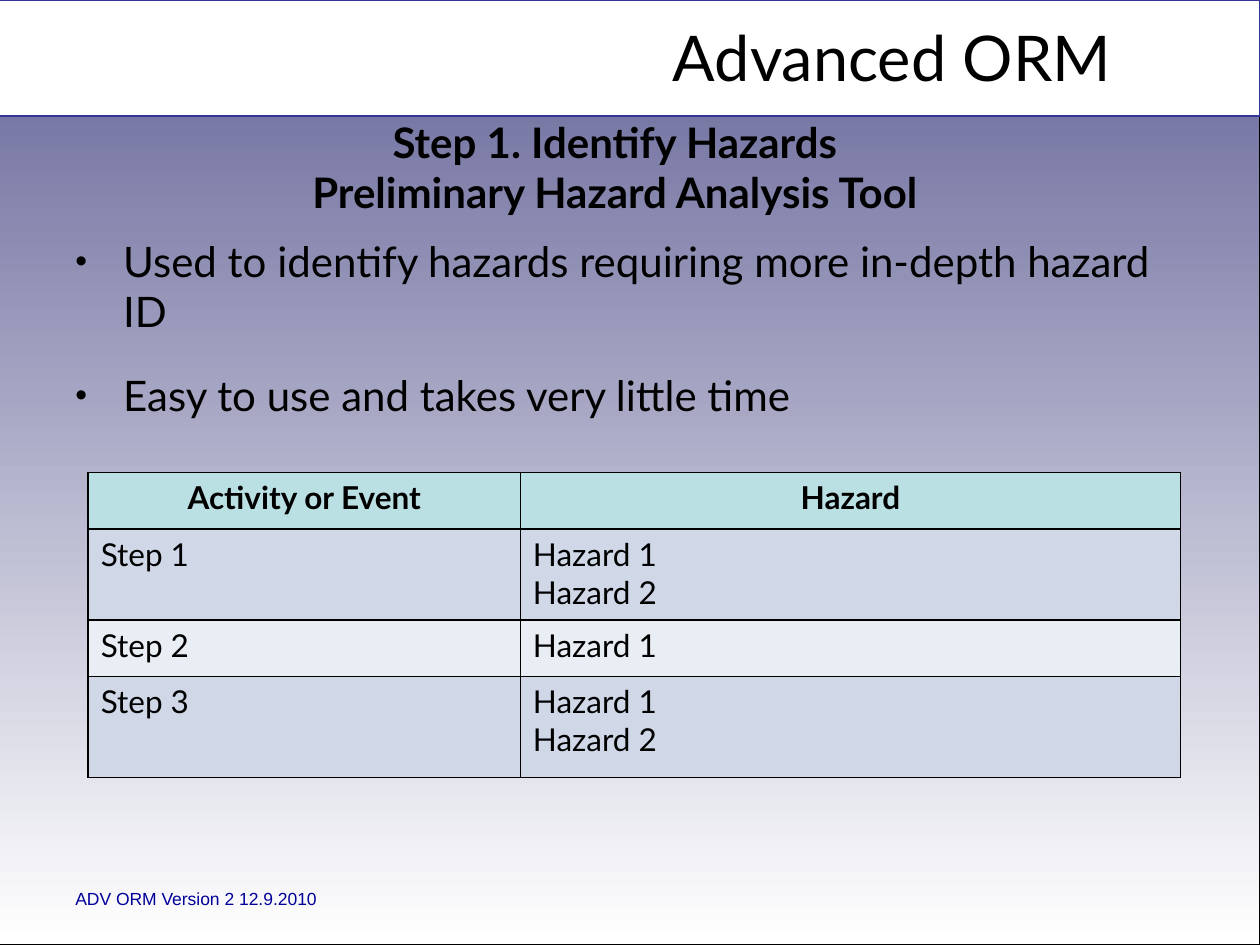
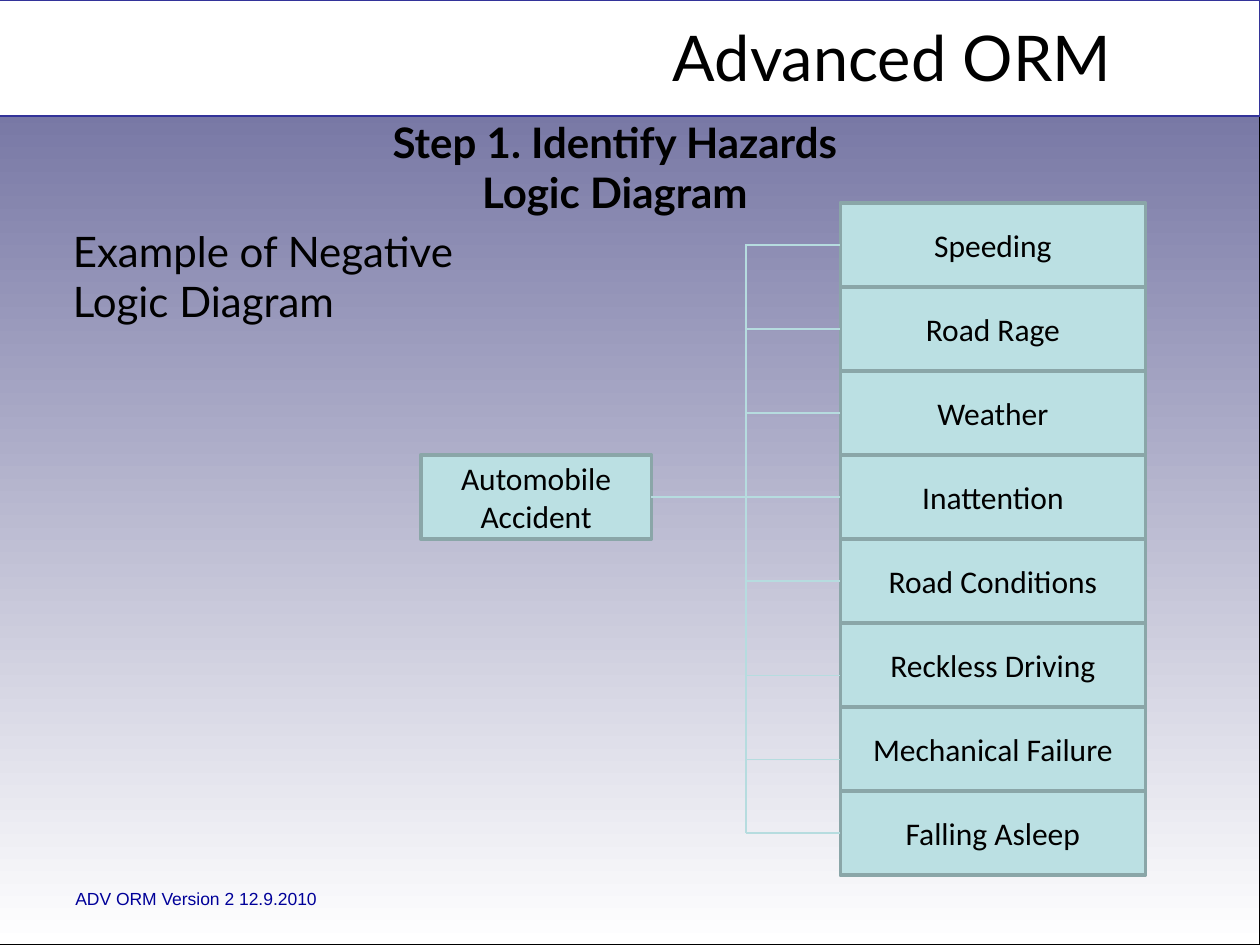
"""Build two Advanced ORM pages: a hazard analysis table and a logic diagram."""
from dataclasses import dataclass, replace
from typing import NamedTuple

import lxml.etree
import pptx
import pptx.dml.color
import pptx.enum.dml
import pptx.enum.shapes
import pptx.enum.text
import pptx.oxml.ns
import pptx.util

Inches, Pt = pptx.util.Inches, pptx.util.Pt
RGBColor = pptx.dml.color.RGBColor
Align, Anchor = pptx.enum.text.PP_ALIGN, pptx.enum.text.MSO_ANCHOR
Preset = pptx.enum.shapes.MSO_SHAPE
qn = pptx.oxml.ns.qn

BLACK = RGBColor(0x00, 0x00, 0x00)
WHITE = RGBColor(0xFF, 0xFF, 0xFF)
SLATE = RGBColor(0x66, 0x66, 0x99)
BAND_EDGE = RGBColor(0x33, 0x33, 0x99)
FOOTER_BLUE = RGBColor(0x00, 0x00, 0x99)
AQUA = RGBColor(0xBB, 0xE0, 0xE3)
BOX_EDGE = RGBColor(0x8A, 0xA6, 0xA8)
BRANCH = RGBColor(0xB6, 0xDC, 0xDF)
ROW_DARK = RGBColor(0xD0, 0xD8, 0xE8)
ROW_LIGHT = RGBColor(0xE9, 0xED, 0xF4)

HANGING = 0.38
TRUNK_X = 5.92
CAUSE_STEP = 2 / 3


class Area(NamedTuple):
    """Left, top, width and height in inches."""
    left: float
    top: float
    width: float
    height: float

    def lengths(self) -> list[int]:
        """Give the four values as slide lengths."""
        return [Inches(value) for value in self]


@dataclass(frozen=True)
class Style:
    """Look of a block of text."""
    size: float
    font: str = "Lato"
    color: RGBColor = BLACK
    bold: bool = False
    align: Align = Align.LEFT
    anchor: Anchor = Anchor.TOP


@dataclass(frozen=True)
class Cause:
    """One cause in the diagram, with its branch height if off centre."""
    label: str
    branch_y: float | None = None


TITLE = Style(36, align=Align.CENTER, anchor=Anchor.MIDDLE)
HEADING = Style(24, bold=True, align=Align.CENTER, anchor=Anchor.MIDDLE)
BODY = Style(24)
FOOTER = Style(10, "Arial", FOOTER_BLUE)
BOX_TEXT = Style(18, "Calibri", align=Align.CENTER, anchor=Anchor.MIDDLE)
CELL = Style(18)
HEADER_CELL = replace(CELL, bold=True, align=Align.CENTER)

HAZARD_ROWS = [
    ("Activity or Event", "Hazard"),
    ("Step 1", "Hazard 1\nHazard 2"),
    ("Step 2", "Hazard 1"),
    ("Step 3", "Hazard 1\nHazard 2"),
]
COLUMN_WIDTHS = (3.43, 5.24)
ROW_HEIGHTS = (0.45, 0.72, 0.45, 0.8)

CAUSES = [
    Cause("Speeding"),
    Cause("Road Rage"),
    Cause("Weather"),
    Cause("Inattention"),
    Cause("Road Conditions"),
    Cause("Reckless Driving", 5.36),
    Cause("Mechanical Failure", 6.03),
    Cause("Falling Asleep"),
]
TRUNK_CAUSE = "Inattention"


def write(frame, text: str, style: Style) -> None:
    """Fill a text frame and format every run."""
    frame.text = text
    for para in frame.paragraphs:
        para.alignment = style.align
        for span in para.runs:
            span.font.size = Pt(style.size)
            span.font.name = style.font
            span.font.bold = style.bold
            span.font.color.rgb = style.color


def add_text(page, area: Area, text: str, style: Style):
    """Add a wrapped text box and return its frame."""
    frame = page.shapes.add_textbox(*area.lengths()).text_frame
    frame.word_wrap = True
    frame.vertical_anchor = style.anchor
    write(frame, text, style)
    return frame


def add_box(page, area: Area, preset: Preset, fill: RGBColor | None,
            edge: RGBColor, width: float):
    """Add an outlined shape without shadow."""
    box = page.shapes.add_shape(preset, *area.lengths())
    box.shadow.inherit = False
    if fill is not None:
        box.fill.solid()
        box.fill.fore_color.rgb = fill
    box.line.color.rgb = edge
    box.line.width = Pt(width)
    return box


def add_process(page, area: Area, text: str):
    """Add a labelled box of the logic diagram."""
    box = add_box(page, area, Preset.FLOWCHART_PROCESS, AQUA, BOX_EDGE, 2)
    box.text_frame.word_wrap = True
    box.text_frame.vertical_anchor = BOX_TEXT.anchor
    write(box.text_frame, text, BOX_TEXT)
    return box


def add_line(page, start: tuple[float, float], end: tuple[float, float]):
    """Add a thin diagram line without shadow."""
    line = page.shapes.add_connector(
        pptx.enum.shapes.MSO_CONNECTOR.STRAIGHT,
        *(Inches(value) for value in start + end))
    line.line.color.rgb = BRANCH
    line.line.width = Pt(0.75)
    properties = line.element.find(qn("p:spPr"))
    lxml.etree.SubElement(properties, qn("a:effectLst"))
    return line


def add_page(deck, heading: str):
    """Add a page with the shared background, title, footer and heading."""
    page = deck.slides.add_slide(deck.slide_layouts[6])
    backdrop = add_box(page, Area(-0.12, 0, 10.12, 7.5), Preset.RECTANGLE,
                       None, BLACK, 0.75)
    backdrop.fill.gradient()
    backdrop.fill.gradient_angle = 270
    for stop, color in zip(backdrop.fill.gradient_stops, (SLATE, WHITE)):
        stop.color.rgb = color
    add_box(page, Area(-0.12, 0, 10.12, 0.92), Preset.RECTANGLE,
            WHITE, BAND_EDGE, 0.75)
    add_text(page, Area(4.16, 0.16, 5.84, 0.57), "Advanced ORM", TITLE)
    add_text(page, Area(0.5, 7, 8, 0.27), "ADV ORM Version 2 12.9.2010", FOOTER)
    add_text(page, Area(0.44, 1.03, 8.88, 0.59), heading, HEADING)
    return page


def hang(para, bullet: bool) -> None:
    """Give a paragraph a hanging indent and, if wanted, a bullet."""
    properties = para._p.get_or_add_pPr()
    properties.set("marL", str(Inches(HANGING)))
    properties.set("indent", str(-Inches(HANGING)))
    if bullet:
        color = lxml.etree.SubElement(properties, qn("a:buClr"))
        lxml.etree.SubElement(color, qn("a:srgbClr"), val=str(BLACK))
        lxml.etree.SubElement(properties, qn("a:buSzPct"), val="80000")
        lxml.etree.SubElement(properties, qn("a:buFont"), typeface="Arial")
        lxml.etree.SubElement(properties, qn("a:buChar"), char="•")


def border(cell) -> None:
    """Draw a black one-point line on each side of a cell."""
    properties = cell._tc.get_or_add_tcPr()
    for side in ("a:lnL", "a:lnR", "a:lnT", "a:lnB"):
        line = lxml.etree.SubElement(properties, qn(side), w=str(Pt(1)))
        fill = lxml.etree.SubElement(line, qn("a:solidFill"))
        lxml.etree.SubElement(fill, qn("a:srgbClr"), val=str(BLACK))


def add_hazard_table(page) -> None:
    """Add the table of activities and hazards."""
    area = Area(0.7, 3.75, sum(COLUMN_WIDTHS), sum(ROW_HEIGHTS))
    table = page.shapes.add_table(
        len(ROW_HEIGHTS), len(COLUMN_WIDTHS), *area.lengths()).table
    table.first_row = table.horz_banding = False
    for column, width in zip(table.columns, COLUMN_WIDTHS):
        column.width = Inches(width)
    for index, (row, height) in enumerate(zip(table.rows, ROW_HEIGHTS)):
        row.height = Inches(height)
        band = ROW_DARK if index % 2 else ROW_LIGHT
        for cell, text in zip(row.cells, HAZARD_ROWS[index]):
            border(cell)
            cell.fill.solid()
            cell.fill.fore_color.rgb = band if index else AQUA
            write(cell.text_frame, text, CELL if index else HEADER_CELL)


def build_analysis_page(deck) -> None:
    """Build the preliminary hazard analysis page."""
    page = add_page(deck, "Step 1. Identify Hazards\vPreliminary Hazard Analysis Tool")
    frame = add_text(
        page, Area(0.5, 1.82, 9, 1.91),
        "Used to identify hazards requiring more in-depth hazard ID\n"
        "Easy to use and takes very little time", BODY)
    for para in frame.paragraphs:
        hang(para, bullet=True)
    frame.paragraphs[1].space_before = Pt(19)
    add_hazard_table(page)


def build_diagram_page(deck) -> None:
    """Build the negative logic diagram page."""
    page = add_page(deck, "Step 1. Identify Hazards\vLogic Diagram")
    frame = add_text(page, Area(0.48, 1.74, 9, 5.21),
                     "Example of Negative\nLogic Diagram", BODY)
    for para in frame.paragraphs:
        hang(para, bullet=False)
    accident = add_process(page, Area(3.34, 3.61, 1.83, 0.67),
                           "Automobile\nAccident")
    areas = [Area(6.67, 1.61 + index * CAUSE_STEP, 2.42, 0.67)
             for index in range(len(CAUSES))]
    boxes = [add_process(page, area, cause.label)
             for area, cause in zip(areas, CAUSES)]
    add_line(page, (TRUNK_X, 1.94), (TRUNK_X, 6.61))
    for cause, area, box in zip(CAUSES, areas, boxes):
        height = cause.branch_y or area.top + area.height / 2
        branch = add_line(page, (TRUNK_X, height), (area.left, height))
        if cause.label == TRUNK_CAUSE:
            branch.begin_connect(accident, 3)
        if cause.branch_y is None:
            branch.end_connect(box, 1)


def main() -> None:
    """Build and save the deck."""
    deck = pptx.Presentation()
    deck.slide_width, deck.slide_height = Inches(10), Inches(7.5)
    build_analysis_page(deck)
    build_diagram_page(deck)
    deck.save("out.pptx")


if __name__ == "__main__":
    main()
